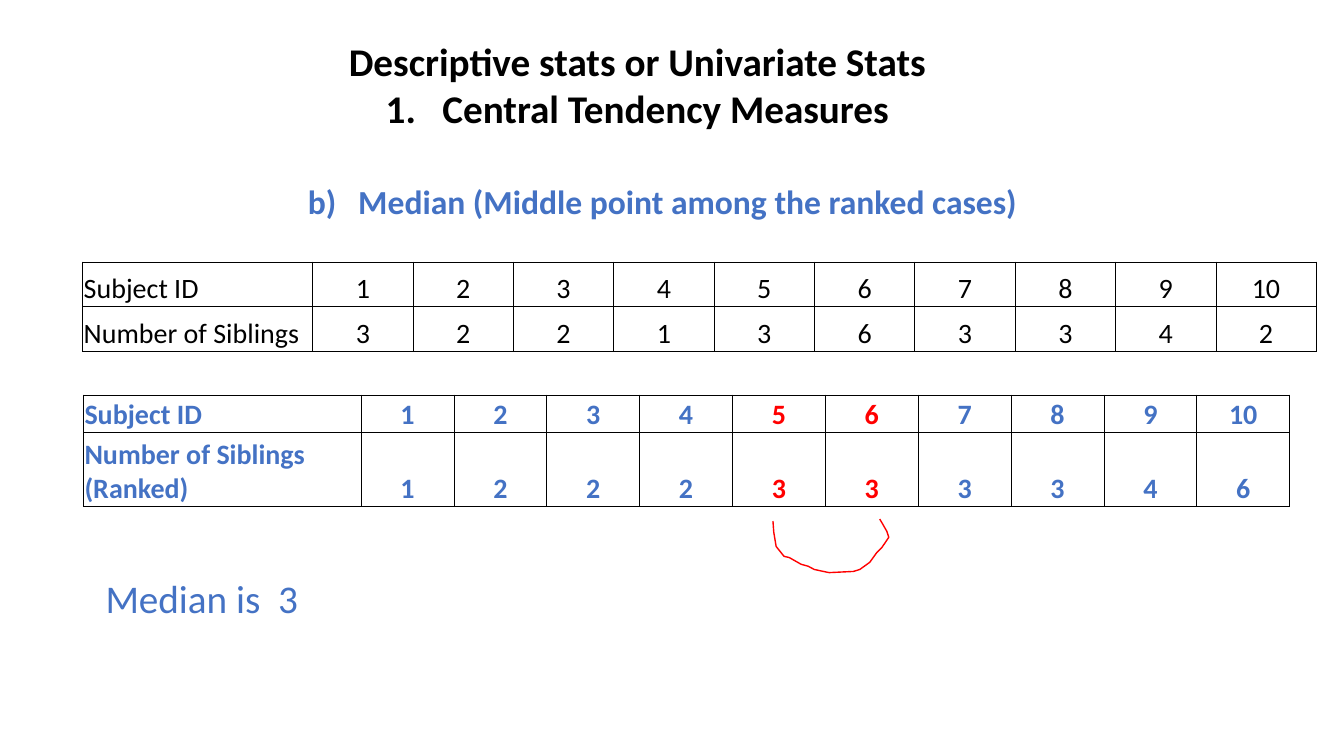
"""Build the slide that finds a median among ranked cases."""
from dataclasses import dataclass

from lxml import etree
from pptx import Presentation
from pptx import util as u
from pptx.dml.color import RGBColor
from pptx.enum import text as t
from pptx.oxml.ns import qn


@dataclass(frozen=True)
class Theme:
    font: str = "Calibri"
    ink: str = "000000"
    blue: str = "4472C4"
    red: str = "FF0000"
    big: int = 28
    mid: int = 24
    small: int = 20


@dataclass(frozen=True)
class Box:
    left: float
    top: float
    width: float
    height: float


@dataclass(frozen=True)
class Grid:
    left: float
    top: float
    label: float
    col: float
    rows: tuple[float, ...]
    data: tuple[tuple[str, list[int]], ...]
    color: str
    bold: bool = False
    marked: tuple[int, ...] = ()


LOOK = Theme()
IDS = ("Subject ID", list(range(1, 11)))
GRIDS = (
    Grid(2.08, 6.6, 5.8, 2.53, (1.12, 1.12),
         (IDS, ("Number of Siblings", [3, 2, 2, 1, 3, 6, 3, 3, 4, 2])),
         LOOK.ink),
    Grid(2.1, 9.95, 7, 2.34, (0.95, 1.86),
         (IDS, ("Number of Siblings (Ranked)", [1, 2, 2, 2, 3, 3, 3, 3, 4, 6])),
         LOOK.blue, True, (5, 6)),
)
ARC = (
    (19.48, 13.13), (19.5, 13.41), (19.56, 13.77), (19.76, 14.02),
    (19.89, 14.05), (20.19, 14.22), (20.37, 14.27), (20.52, 14.35),
    (20.75, 14.4), (20.9, 14.43), (21.51, 14.4), (21.67, 14.35),
    (21.92, 14.17), (22.1, 13.92), (22.23, 13.79), (22.4, 13.54),
    (22.35, 13.39), (22.23, 13.18), (22.17, 13.08),
)


def write(para, words: str, size: int, color: str, bold: bool = False) -> None:
    run = para.add_run()
    run.text = words
    font = run.font
    font.name, font.size, font.bold = LOOK.font, u.Pt(size), bold
    font.color.rgb = RGBColor.from_string(color)


def place(shape, box: Box):
    shape.left, shape.top = u.Cm(box.left), u.Cm(box.top)
    shape.width, shape.height = u.Cm(box.width), u.Cm(box.height)
    frame = shape.text_frame
    frame.word_wrap = True
    frame.auto_size = t.MSO_AUTO_SIZE.NONE
    frame.vertical_anchor = t.MSO_ANCHOR.TOP
    return frame


def center(para) -> None:
    para.alignment = t.PP_ALIGN.CENTER
    para.line_spacing = 1.0
    para.space_before = u.Pt(0)


def number(para, kind: str, start: int, left: float, hang: float) -> None:
    props = para._p.get_or_add_pPr()
    props.set("marL", str(u.Cm(left)))
    props.set("indent", str(-u.Cm(hang)))
    etree.SubElement(props, qn("a:buAutoNum"), type=kind, startAt=str(start))


def border(cell) -> None:
    props = cell._tc.get_or_add_tcPr()
    for side in ("lnL", "lnR", "lnT", "lnB"):
        line = etree.SubElement(props, qn(f"a:{side}"), w=str(u.Pt(0.5)))
        fill = etree.SubElement(line, qn("a:solidFill"))
        etree.SubElement(fill, qn("a:srgbClr"), val=LOOK.ink)


def draw_grid(slide, grid: Grid) -> None:
    count = len(IDS[1])
    table = slide.shapes.add_table(
        len(grid.rows), count + 1, u.Cm(grid.left), u.Cm(grid.top),
        u.Cm(grid.label + count * grid.col), u.Cm(sum(grid.rows))).table
    table.first_row = table.horz_banding = False
    for i, col in enumerate(table.columns):
        col.width = u.Cm(grid.col if i else grid.label)
    for i, (label, values) in enumerate(grid.data):
        table.rows[i].height = u.Cm(grid.rows[i])
        for j, value in enumerate([label, *values]):
            cell = table.cell(i, j)
            border(cell)
            cell.fill.background()
            cell.margin_left = cell.margin_right = cell.margin_top = u.Cm(0.03)
            cell.margin_bottom = 0
            cell.vertical_anchor = t.MSO_ANCHOR.BOTTOM
            para = cell.text_frame.paragraphs[0]
            para.alignment = t.PP_ALIGN.CENTER if j else t.PP_ALIGN.LEFT
            color = LOOK.red if j in grid.marked else grid.color
            write(para, str(value), LOOK.small, color, grid.bold)


def draw_arc(slide) -> None:
    first, *rest = [(u.Cm(x), u.Cm(y)) for x, y in ARC]
    pen = slide.shapes.build_freeform(*first)
    pen.add_line_segments(rest, close=False)
    arc = pen.convert_to_shape()
    arc.shadow.inherit = False
    arc.fill.background()
    arc.line.color.rgb = RGBColor.from_string(LOOK.red)
    arc.line.width = u.Pt(1)


def main() -> None:
    deck = Presentation()
    deck.slide_width, deck.slide_height = u.Cm(33.87), u.Cm(19.05)
    slide = deck.slides.add_slide(deck.slide_layouts[1])

    title = place(slide.shapes.title, Box(4.95, 0.81, 22.22, 2.7))
    head, topic = title.paragraphs[0], title.add_paragraph()
    for para, words in ((head, "Descriptive stats or Univariate Stats"),
                        (topic, "Central Tendency Measures")):
        center(para)
        write(para, words, LOOK.big, LOOK.ink, True)
    number(topic, "arabicPeriod", 1, 1.43, 1.43)

    body = place(slide.placeholders[1], Box(4.95, 4.43, 22.22, 1.27))
    point = body.paragraphs[0]
    point.level = 1
    center(point)
    number(point, "alphaLcParenR", 2, 2.54, 1.27)
    write(point, "Median (Middle point among the ranked cases)",
          LOOK.mid, LOOK.blue, True)

    for grid in GRIDS:
        draw_grid(slide, grid)
    draw_arc(slide)

    spot = slide.shapes.add_textbox(0, 0, 0, 0)
    note = place(spot, Box(2.41, 14.35, 6.17, 1.45))
    write(note.paragraphs[0], "Median is  3", LOOK.big, LOOK.blue)
    deck.save("out.pptx")


if __name__ == "__main__":
    main()
